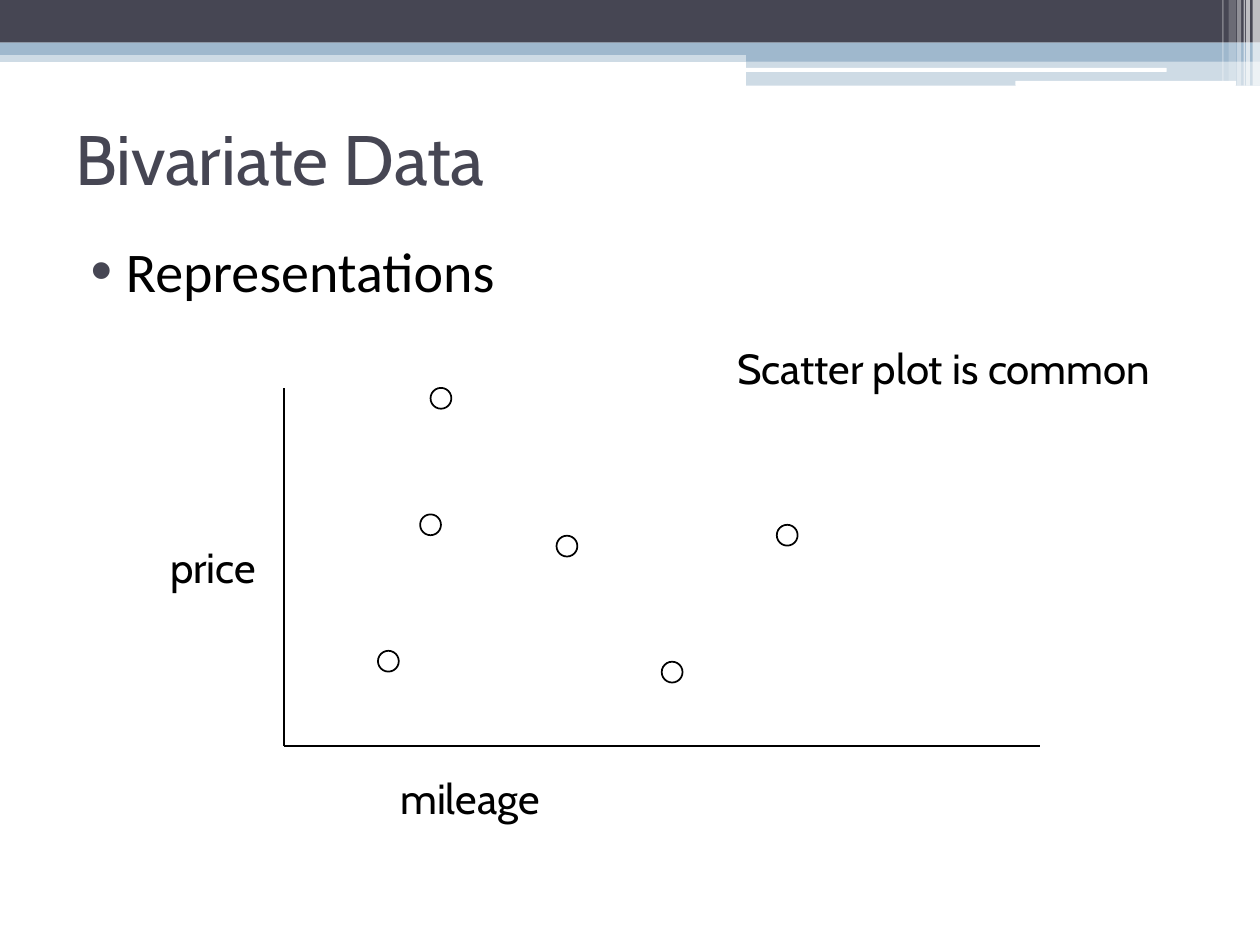
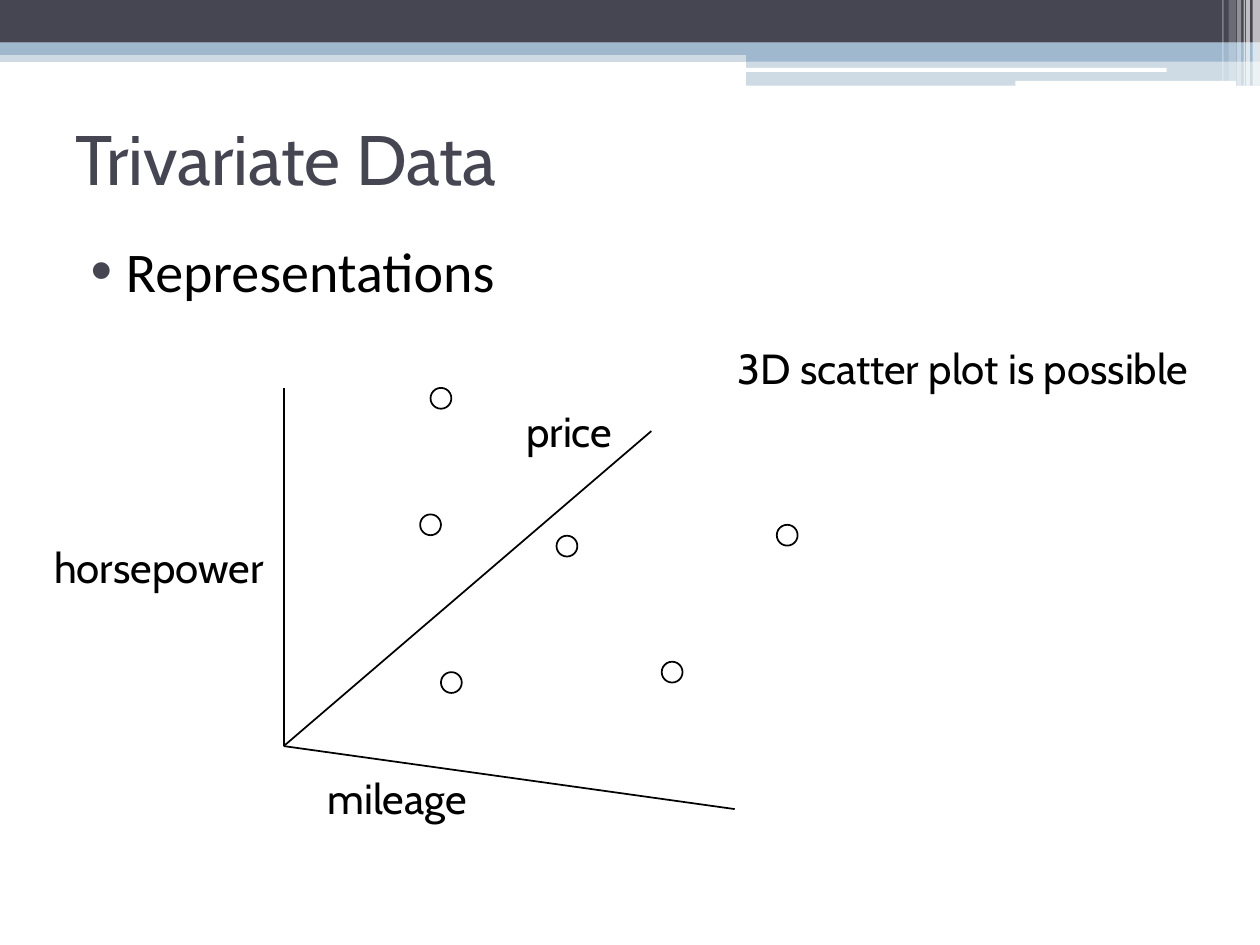
import lxml.etree
import pptx
import pptx.dml.color
import pptx.enum.shapes
import pptx.enum.text
import pptx.oxml.ns
import pptx.util

Cm = pptx.util.Cm
Pt = pptx.util.Pt
qn = pptx.oxml.ns.qn
SHAPES = pptx.enum.shapes.MSO_SHAPE
ANCHOR = pptx.enum.text.MSO_ANCHOR
AUTO_SIZE = pptx.enum.text.MSO_AUTO_SIZE

SLIDE_WIDTH, SLIDE_HEIGHT = 25.4, 19.05
PANEL_LEFT = 15.04
PANEL_WIDTH = SLIDE_WIDTH - PANEL_LEFT
ORIGIN = (5.72, 15.04)
VERTICAL_END = (5.72, 7.82)
DOT_SIZE = 0.42
SHARED_DOTS = [(15.66, 10.58), (8.68, 7.82), (11.22, 10.8), (13.34, 13.34), (8.47, 10.37)]


def color(hex_string):
    return pptx.dml.color.RGBColor.from_string(hex_string)


def add_child(parent, tag, **attributes):
    return lxml.etree.SubElement(parent, qn(tag), attributes)


def write_text(shape, text, font="Cabin", size=24, ink="000000",
               anchor=ANCHOR.TOP, wrap=True, grow=False):
    frame = shape.text_frame
    frame.word_wrap = wrap
    frame.auto_size = AUTO_SIZE.SHAPE_TO_FIT_TEXT if grow else AUTO_SIZE.NONE
    frame.vertical_anchor = anchor
    paragraph = frame.paragraphs[0]
    run = paragraph.add_run()
    run.text = text
    run.font.name = font
    run.font.size = Pt(size)
    run.font.color.rgb = color(ink)
    return paragraph


class Deck:
    dark = "464653"
    blue = "9FB8CD"
    white = "FFFFFF"
    black = "000000"

    def __init__(self):
        self.presentation = pptx.Presentation()
        self.presentation.slide_width = Cm(SLIDE_WIDTH)
        self.presentation.slide_height = Cm(SLIDE_HEIGHT)
        self.slide = None

    def shape(self, kind, left, top, width, height, fill, opacity=100, outline=None):
        shape = self.slide.shapes.add_shape(kind, Cm(left), Cm(top), Cm(width), Cm(height))
        shape.shadow.inherit = False
        shape.fill.solid()
        shape.fill.fore_color.rgb = color(fill)
        if opacity < 100:
            solid_fill = shape.element.spPr.find(qn("a:solidFill"))
            add_child(solid_fill[0], "a:alpha", val=str(opacity * 1000))
        if outline:
            shape.line.color.rgb = color(outline)
            shape.line.width = Pt(1)
        else:
            shape.line.fill.background()

    def text(self, text, left, top, width, height, **text_format):
        box = self.slide.shapes.add_textbox(Cm(left), Cm(top), Cm(width), Cm(height))
        return write_text(box, text, **text_format)

    def label(self, text, left, top, width):
        self.text(text, left, top, width, 1.27, wrap=False, grow=True)

    def bullet(self, text):
        paragraph = self.text(text, 1.27, 4.65, 22.86, 13.39, font="Calibri", size=32)
        paragraph.space_before = Pt(3)
        properties = paragraph._p.get_or_add_pPr()
        properties.set("marL", str(Cm(1.02)))
        properties.set("indent", str(Cm(-0.71)))
        add_child(add_child(properties, "a:buClr"), "a:srgbClr", val=self.dark)
        add_child(properties, "a:buSzPct", val="110000")
        add_child(properties, "a:buFont", typeface="Arial")
        add_child(properties, "a:buChar", char="•")

    def axis(self, end):
        points = [Cm(value) for value in ORIGIN + end]
        connector = self.slide.shapes.add_connector(
            pptx.enum.shapes.MSO_CONNECTOR.STRAIGHT, *points)
        connector.line.color.rgb = color(self.black)
        connector.line.width = Pt(1)
        add_child(connector._element.spPr, "a:effectLst")

    def dots(self, positions):
        for left, top in positions:
            self.shape(SHAPES.OVAL, left, top, DOT_SIZE, DOT_SIZE, self.white, outline=self.black)

    def header(self):
        bands = [
            (0, 1.02, SLIDE_WIDTH, 0.23, self.blue, 50),
            (0, 0, SLIDE_WIDTH, 0.86, self.dark, 100),
            (0, 0.86, SLIDE_WIDTH, 0.25, self.blue, 100),
            (PANEL_LEFT, 0.99, PANEL_WIDTH, 0.25, self.blue, 100),
            (PANEL_LEFT, 1.22, PANEL_WIDTH, 0.51, self.blue, 50),
        ]
        rules = [(15.01, 1.37, 8.51, 0.08), (20.47, 1.63, 4.45, 0.1)]
        stripes = [
            (25.25, 0.15, 1.73, 65),
            (25.12, 0.08, 1.73, 65),
            (25.07, 0.03, 1.73, 60),
            (24.94, 0.08, 1.73, 40),
            (24.77, 0.15, 1.63, 20),
            (24.64, 0.03, 1.63, 30),
        ]
        for band in bands:
            self.shape(SHAPES.RECTANGLE, *band)
        for rule in rules:
            self.shape(SHAPES.ROUNDED_RECTANGLE, *rule, self.white)
        for left, width, height, opacity in stripes:
            self.shape(SHAPES.RECTANGLE, left, 0, width, height, self.white, opacity)

    def start_slide(self, title):
        layout = self.presentation.slide_layouts.get_by_name("Blank")
        self.slide = self.presentation.slides.add_slide(layout)
        self.header()
        self.text(title, 1.27, 1.7, 22.86, 2.97, size=40, ink=self.dark, anchor=ANCHOR.MIDDLE)
        self.bullet("Representations")

    def scatter_slide(self, title, note, axis_ends, labels, extra_dot):
        self.start_slide(title)
        self.label(*note)
        for end in axis_ends:
            self.axis(end)
        for label in labels:
            self.label(*label)
        self.dots(SHARED_DOTS + [extra_dot])


def main():
    deck = Deck()
    deck.scatter_slide(
        "Bivariate Data",
        note=("Scatter plot is common", 14.61, 6.78, 9.12),
        axis_ends=[VERTICAL_END, (20.96, 15.04)],
        labels=[("price", 3.18, 10.8, 2.31), ("mileage", 7.82, 15.44, 3.4)],
        extra_dot=(7.62, 13.12),
    )
    deck.scatter_slide(
        "Trivariate Data",
        note=("3D scatter plot is possible", 14.61, 6.78, 10.11),
        axis_ends=[VERTICAL_END, (14.81, 16.31), (13.13, 8.69)],
        labels=[
            ("horsepower", 0.84, 10.8, 4.88),
            ("mileage", 6.35, 15.44, 3.4),
            ("price", 10.36, 8.05, 2.31),
        ],
        extra_dot=(8.89, 13.55),
    )
    deck.presentation.save("out.pptx")


if __name__ == "__main__":
    main()
